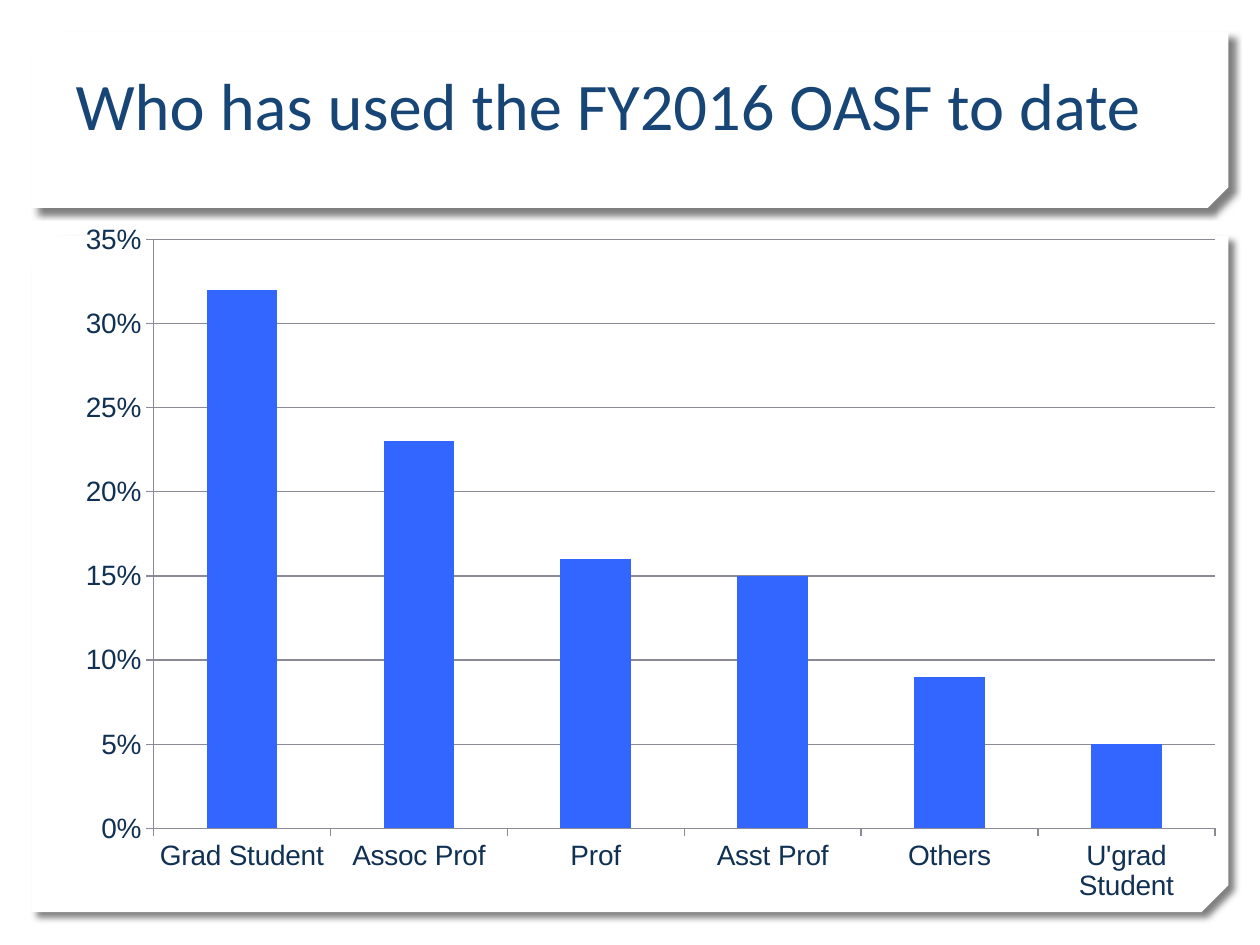
"""Build a slide showing the share of OASF users by role as a column chart."""
from lxml import etree
from pptx import Presentation
from pptx import util as u
from pptx.chart.data import CategoryChartData
from pptx.dml.color import RGBColor
from pptx.enum import chart as charts, shapes, text
from pptx.oxml import parse_xml
from pptx.oxml.ns import nsdecls, qn

TITLE = "Who has used the FY2016 OASF to date"
USERS = {
    "Grad Student": 0.32,
    "Assoc Prof": 0.23,
    "Prof": 0.16,
    "Asst Prof": 0.15,
    "Others": 0.09,
    "U'grad Student": 0.05,
}
WIDTH, HEIGHT, MARGIN = 10, 7.5, 0.25
PANELS = [(1.87, 5.37, 0.04), (MARGIN, 1.4, 0.117)]
TITLE_AREA = (0.5, 0.3, 9, 0.89)
CHART_AREA = (0.5, 1.67, 9.33, 5.6)
PLOT_SHARES = {"x": 0.077, "y": 0.041, "w": 0.903, "h": 0.835}
WHITE, NAVY, BLUE, INK, GRAY = "FFFFFF", "174576", "3366FF", "103154", "8B8B97"


def color(value):
    """Turn a hex string into a colour."""
    return RGBColor.from_string(value)


def inches(area):
    """Convert a sequence of inches to lengths."""
    return [u.Inches(side) for side in area]


def style_font(font, name, size, shade):
    """Set the typeface, size and colour of a font."""
    font.name, font.size, font.bold = name, u.Pt(size), False
    font.color.rgb = color(shade)


def add_panel(page, top, height, snip):
    """Add a white panel with a snipped lower right corner and a shadow."""
    area = inches((MARGIN, top, WIDTH - 2 * MARGIN, height))
    panel = page.shapes.add_shape(shapes.MSO_SHAPE.SNIP_2_DIAG_RECTANGLE, *area)
    panel.adjustments[0], panel.adjustments[1] = 0, snip
    panel.fill.solid()
    panel.fill.fore_color.rgb = color(WHITE)
    panel.line.fill.background()
    properties = panel._element.spPr
    properties.find(qn("a:xfrm")).set("flipV", "1")
    properties.append(parse_xml(
        f'<a:effectLst {nsdecls("a")}><a:outerShdw blurRad="{u.Pt(4)}" dist="{u.Pt(5)}" '
        'dir="2700000" algn="tl" rotWithShape="0"><a:srgbClr val="000000">'
        '<a:alpha val="50000"/></a:srgbClr></a:outerShdw></a:effectLst>'))


def write_title(page, words, **style):
    """Fill the title placeholder and bring it in front of the panels."""
    title = page.shapes.title
    title.left, title.top, title.width, title.height = inches(TITLE_AREA)
    frame = title.text_frame
    frame.vertical_anchor = text.MSO_ANCHOR.BOTTOM
    frame.auto_size = text.MSO_AUTO_SIZE.NONE
    para = frame.paragraphs[0]
    para.alignment = text.PP_ALIGN.LEFT
    span = para.add_run()
    span.text = words
    style_font(span.font, **style)
    page.shapes._spTree.append(title._element)


def place_plot(chart):
    """Fix the inner plot area as shares of the chart."""
    area = chart._chartSpace.chart.plotArea
    for old in area.findall(qn("c:layout")):
        area.remove(old)
    layout = etree.Element(qn("c:layout"))
    manual = etree.SubElement(layout, qn("c:manualLayout"))
    settings = {"layoutTarget": "inner", "xMode": "edge", "yMode": "edge", **PLOT_SHARES}
    for name, value in settings.items():
        etree.SubElement(manual, qn(f"c:{name}")).set("val", str(value))
    area.insert(0, layout)


def add_user_chart(page):
    """Add the column chart of users."""
    data = CategoryChartData(number_format="0%")
    data.categories = list(USERS)
    data.add_series("Series 1", list(USERS.values()))
    kind = charts.XL_CHART_TYPE.COLUMN_CLUSTERED
    chart = page.shapes.add_chart(kind, *inches(CHART_AREA), data).chart
    chart.has_legend = chart.has_title = False
    style_font(chart.font, "Arial", 16, INK)
    plot = chart.plots[0]
    plot.gap_width, plot.vary_by_categories = 150, False
    fill = plot.series[0].format.fill
    fill.solid()
    fill.fore_color.rgb = color(BLUE)
    values = chart.value_axis
    values.minimum_scale, values.maximum_scale, values.major_unit = 0, 0.35, 0.05
    values.has_major_gridlines = True
    values.tick_labels.number_format = "0%"
    values.tick_labels.number_format_is_linked = False
    for axis in (chart.category_axis, values):
        axis.major_tick_mark = charts.XL_TICK_MARK.OUTSIDE
    for part in (chart.category_axis, values, values.major_gridlines):
        part.format.line.color.rgb = color(GRAY)
        part.format.line.width = u.Pt(0.75)
    place_plot(chart)


def main():
    """Build and save the deck."""
    deck = Presentation()
    deck.slide_width, deck.slide_height = inches((WIDTH, HEIGHT))
    page = deck.slides.add_slide(deck.slide_layouts[5])
    for panel in PANELS:
        add_panel(page, *panel)
    write_title(page, TITLE, name="Calibri", size=38, shade=NAVY)
    add_user_chart(page)
    deck.save("out.pptx")


if __name__ == "__main__":
    main()
